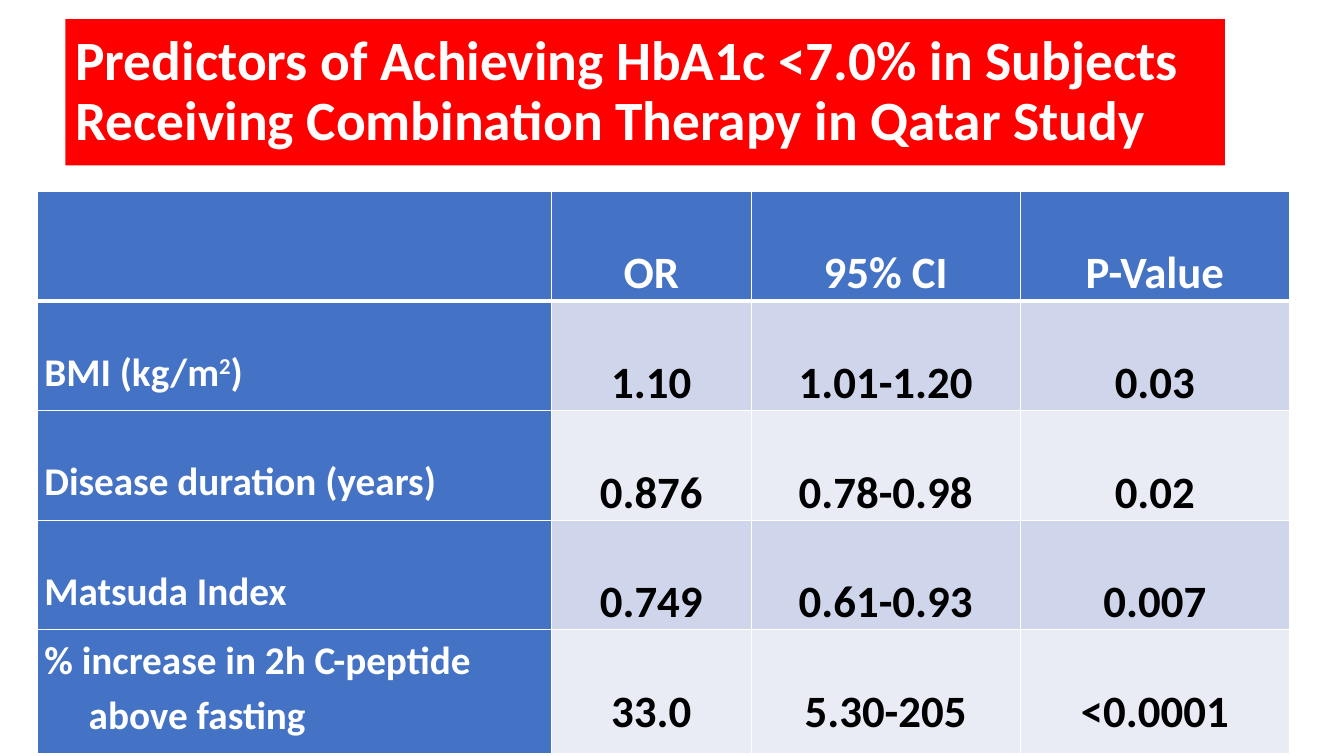
import pptx
import pptx.dml.color
import pptx.enum.shapes
import pptx.enum.text
import pptx.oxml
import pptx.oxml.ns
import pptx.util
import lxml.etree

Inches = pptx.util.Inches
Pt = pptx.util.Pt
ALIGN = pptx.enum.text.PP_ALIGN
ANCHOR = pptx.enum.text.MSO_ANCHOR

COLORS = {
    "banner": "FF0000",
    "header": "4472C4",
    "odd_row": "CFD5EA",
    "even_row": "E9EBF5",
    "white": "FFFFFF",
    "black": "000000",
}
TITLE = "Predictors of Achieving HbA1c <7.0% in Subjects Receiving Combination Therapy in Qatar Study"
HEADINGS = ["", "OR", "95% CI", "P-Value"]
PREDICTORS = [
    ["BMI (kg/m²)", "1.10", "1.01-1.20", "0.03"],
    ["Disease duration (years)", "0.876", "0.78-0.98", "0.02"],
    ["Matsuda Index", "0.749", "0.61-0.93", "0.007"],
    ["% increase in 2h C-peptide\nabove fasting", "33.0", "5.30-205", "<0.0001"],
]
COLUMN_WIDTHS = [5.1, 1.98, 2.67, 2.67]
ROW_HEIGHTS = [0.96, 0.96, 0.96, 0.96, 1.23]


def color(name):
    return pptx.dml.color.RGBColor.from_string(COLORS[name])


def fill_solid(target, name):
    target.fill.solid()
    target.fill.fore_color.rgb = color(name)


def style_paragraph(paragraph, size, color_name, spacing, alignment=ALIGN.LEFT):
    paragraph.alignment = alignment
    paragraph.line_spacing = spacing
    paragraph.font.name = "Calibri"
    paragraph.font.size = Pt(size)
    paragraph.font.bold = True
    paragraph.font.color.rgb = color(color_name)


def add_title(slide, left, top, width, height):
    banner = slide.shapes.add_shape(
        pptx.enum.shapes.MSO_SHAPE.RECTANGLE,
        Inches(left), Inches(top), Inches(width), Inches(height))
    banner.shadow.inherit = False
    fill_solid(banner, "banner")
    banner.line.fill.background()
    frame = banner.text_frame
    frame.word_wrap = True
    frame.vertical_anchor = ANCHOR.MIDDLE
    paragraph = frame.paragraphs[0]
    paragraph.text = TITLE
    style_paragraph(paragraph, 39.6, "white", 0.9)


def set_borders(cell, top, bottom):
    properties = cell._tc.get_or_add_tcPr()
    for side, width in (("L", 1), ("R", 1), ("T", top), ("B", bottom)):
        line = lxml.etree.SubElement(
            properties, pptx.oxml.ns.qn("a:ln" + side), w=str(Pt(width)))
        solid = lxml.etree.SubElement(line, pptx.oxml.ns.qn("a:solidFill"))
        lxml.etree.SubElement(solid, pptx.oxml.ns.qn("a:srgbClr"), val=COLORS["white"])


def write_label(cell, text):
    lines = text.split("\n")
    spacing = 2.0 if len(lines) == 1 else 1.15
    frame = cell.text_frame
    for index, line in enumerate(lines):
        paragraph = frame.add_paragraph() if index else frame.paragraphs[0]
        style_paragraph(paragraph, 28, "white", spacing)
        if index:
            paragraph._p.get_or_add_pPr().set("marL", str(Inches(0.44)))
        before, square, after = line.partition("²")
        paragraph.add_run().text = before
        if square:
            exponent = paragraph.add_run()
            exponent.text = "2"
            exponent._r.get_or_add_rPr().set("baseline", "30000")
            paragraph.add_run().text = after


def add_predictor_table(slide, left, top):
    rows = [HEADINGS] + PREDICTORS
    table = slide.shapes.add_table(
        len(rows), len(HEADINGS), Inches(left), Inches(top),
        Inches(sum(COLUMN_WIDTHS)), Inches(sum(ROW_HEIGHTS))).table
    for column, width in zip(table.columns, COLUMN_WIDTHS):
        column.width = Inches(width)
    for row, height in zip(table.rows, ROW_HEIGHTS):
        row.height = Inches(height)

    for row_index, texts in enumerate(rows):
        is_header = row_index == 0
        band = "odd_row" if row_index % 2 else "even_row"
        for column_index, text in enumerate(texts):
            cell = table.cell(row_index, column_index)
            is_label = column_index == 0
            set_borders(cell, 3 if row_index == 1 else 1, 3 if is_header else 1)
            fill_solid(cell, "header" if is_header or is_label else band)
            cell.margin_left = cell.margin_right = Inches(0.07)
            cell.margin_top = cell.margin_bottom = 0
            if not text:
                continue
            if is_label:
                write_label(cell, text)
            else:
                paragraph = cell.text_frame.paragraphs[0]
                paragraph.text = text
                style_paragraph(paragraph, 32, "white" if is_header else "black", 2.0, ALIGN.CENTER)


def main():
    presentation = pptx.Presentation()
    presentation.slide_width = Inches(13.33)
    presentation.slide_height = Inches(7.5)
    slide = presentation.slides.add_slide(presentation.slide_layouts[6])
    add_title(slide, 0.65, 0.19, 11.5, 1.45)
    add_predictor_table(slide, 0.37, 1.9)
    presentation.save("out.pptx")


if __name__ == "__main__":
    main()
